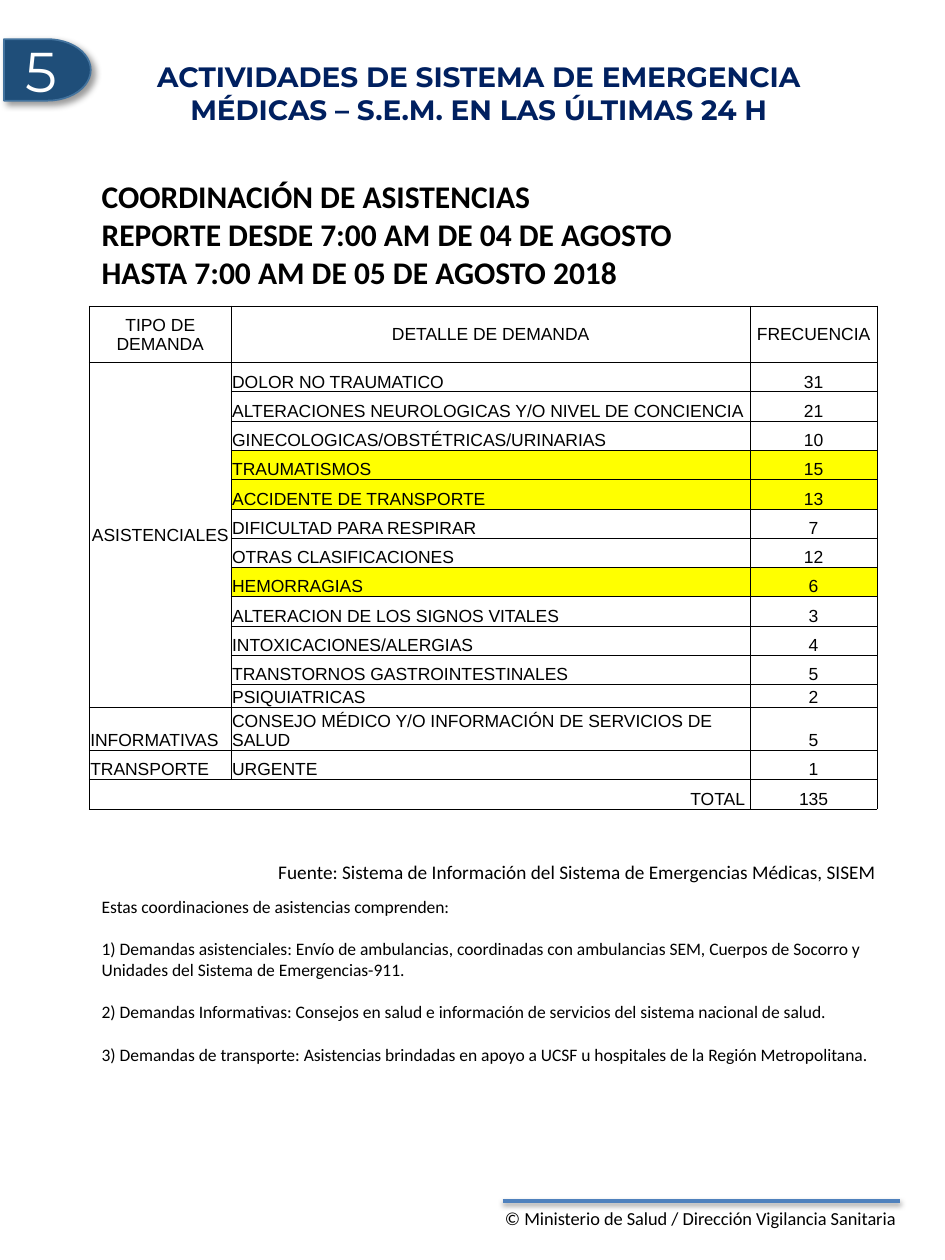
from dataclasses import dataclass
from typing import NamedTuple

from lxml import etree
from pptx import Presentation
from pptx import util as u
from pptx.dml.color import RGBColor
from pptx.enum import shapes, text
from pptx.oxml.ns import qn

Cm, Pt = u.Cm, u.Pt
ALIGN, ANCHOR = text.PP_ALIGN, text.MSO_ANCHOR


@dataclass(frozen=True)
class Theme:
    black: str = "000000"
    white: str = "FFFFFF"
    navy: str = "002060"
    badge: str = "1F4E79"
    badge_line: str = "43739E"
    rule: str = "4F81BD"
    mark: str = "FFFF00"
    body: str = "Calibri"
    display: str = "Montserrat"
    grid: str = "Arial"
    badge_size: float = 32
    heading_size: float = 18
    title_size: float = 16
    source_size: float = 11
    footer_size: float = 10.5
    small_size: float = 10
    border: float = 0.5


T = Theme()


class Style(NamedTuple):
    font: str
    size: float
    color: str = T.black
    bold: bool = False
    align: ALIGN = ALIGN.LEFT
    gap: float = 0


class Box(NamedTuple):
    left: float
    top: float
    width: float
    height: float
    lines: list[str]
    style: Style
    frame: dict


class Demand(NamedTuple):
    detail: str
    count: int
    kind: str = ""
    marked: bool = False
    height: float = 0.59


class Shadow(NamedTuple):
    alpha: int
    blur: float
    dist: float
    angle: int


def set_all(obj, values: dict) -> None:
    for name, value in values.items():
        setattr(obj, name, value)


def write(tf, lines: list[str], style: Style) -> None:
    for i, line in enumerate(lines):
        p = tf.paragraphs[0] if i == 0 else tf.add_paragraph()
        p.alignment = style.align
        p.space_before = Pt(style.gap if i else 0)
        r = p.add_run()
        r.text = line
        set_all(r.font, {"name": style.font, "size": Pt(style.size), "bold": style.bold})
        r.font.color.rgb = RGBColor.from_string(style.color)


def add_shadow(sp, shadow: Shadow) -> None:
    effects = etree.SubElement(sp._element.spPr, qn("a:effectLst"))
    outer = etree.SubElement(effects, qn("a:outerShdw"), blurRad=str(Pt(shadow.blur)),
                             dist=str(Pt(shadow.dist)), dir=str(shadow.angle * 60000),
                             algn="ctr", rotWithShape="0")
    color = etree.SubElement(outer, qn("a:srgbClr"), val=T.black)
    etree.SubElement(color, qn("a:alpha"), val=str(shadow.alpha * 1000))


def add_box(s, box: Box) -> None:
    sp = s.shapes.add_textbox(*map(Cm, box[:4]))
    set_all(sp.text_frame, box.frame)
    write(sp.text_frame, box.lines, box.style)


def add_rule(s) -> None:
    line = s.shapes.add_connector(shapes.MSO_CONNECTOR.STRAIGHT,
                                  Cm(10.13), Cm(24.21), Cm(18.14), Cm(24.21))
    line.line.color.rgb = RGBColor.from_string(T.rule)
    line.line.width = Pt(2)
    add_shadow(line, Shadow(38, 3.1, 1.6, 90))


def add_badge(s) -> None:
    sp = s.shapes.add_shape(shapes.MSO_SHAPE.FLOWCHART_DELAY,
                            Cm(0.08), Cm(0.79), Cm(1.75), Cm(1.24))
    sp.fill.solid()
    sp.fill.fore_color.rgb = RGBColor.from_string(T.badge)
    sp.line.color.rgb = RGBColor.from_string(T.badge_line)
    sp.line.width = Pt(1)
    add_shadow(sp, Shadow(40, 4, 3, 45))
    sp.text_frame.vertical_anchor = ANCHOR.MIDDLE
    write(sp.text_frame, ["5"], Style(T.display, T.badge_size, T.white, align=ALIGN.CENTER))


def fill_cell(cell, value: str, align: ALIGN, anchor: ANCHOR, marked: bool = False) -> None:
    set_all(cell, {"margin_left": Cm(0.02), "margin_right": Cm(0.02), "margin_top": Cm(0.02),
                   "margin_bottom": 0, "vertical_anchor": anchor})
    tcPr = cell._tc.get_or_add_tcPr()
    for side in ("lnL", "lnR", "lnT", "lnB"):
        ln = etree.SubElement(tcPr, qn(f"a:{side}"), w=str(Pt(T.border)))
        solid = etree.SubElement(ln, qn("a:solidFill"))
        etree.SubElement(solid, qn("a:srgbClr"), val=T.black)
    if marked:
        cell.fill.solid()
        cell.fill.fore_color.rgb = RGBColor.from_string(T.mark)
    else:
        cell.fill.background()
    if value:
        write(cell.text_frame, [value], Style(T.grid, T.small_size, align=align))


HEADER = ["TIPO DE DEMANDA", "DETALLE DE DEMANDA", "FRECUENCIA"]
COLUMNS = [2.86, 10.46, 2.56]
DEMANDS = [
    Demand("DOLOR NO TRAUMATICO", 31, "ASISTENCIALES"),
    Demand("ALTERACIONES NEUROLOGICAS Y/O NIVEL DE CONCIENCIA", 21),
    Demand("GINECOLOGICAS/OBSTÉTRICAS/URINARIAS", 10),
    Demand("TRAUMATISMOS", 15, marked=True),
    Demand("ACCIDENTE DE TRANSPORTE", 13, marked=True),
    Demand("DIFICULTAD PARA RESPIRAR", 7),
    Demand("OTRAS CLASIFICACIONES", 12),
    Demand("HEMORRAGIAS", 6, marked=True),
    Demand("ALTERACION DE LOS SIGNOS VITALES", 3),
    Demand("INTOXICACIONES/ALERGIAS", 4),
    Demand("TRANSTORNOS GASTROINTESTINALES", 5),
    Demand("PSIQUIATRICAS", 2, height=0.46),
    Demand("CONSEJO MÉDICO Y/O INFORMACIÓN DE SERVICIOS DE SALUD", 5, "INFORMATIVAS", height=0.87),
    Demand("URGENTE", 1, "TRANSPORTE"),
]


def add_demand_table(s) -> None:
    heights = [1.14, *(d.height for d in DEMANDS), 0.59]
    frame = s.shapes.add_table(len(heights), len(COLUMNS), Cm(1.8), Cm(6.17),
                               Cm(sum(COLUMNS)), Cm(sum(heights)))
    table = frame.table
    set_all(table, {"first_row": False, "horz_banding": False})
    for column, width in zip(table.columns, COLUMNS):
        column.width = Cm(width)
    for row, height in zip(table.rows, heights):
        row.height = Cm(height)

    # Header, demand rows, total
    for c, name in enumerate(HEADER):
        fill_cell(table.cell(0, c), name, ALIGN.CENTER, ANCHOR.MIDDLE)
    for i, d in enumerate(DEMANDS, 1):
        first = i == 1
        fill_cell(table.cell(i, 0), d.kind, ALIGN.CENTER if first else ALIGN.LEFT,
                  ANCHOR.MIDDLE if first else ANCHOR.BOTTOM)
        fill_cell(table.cell(i, 1), d.detail, ALIGN.LEFT, ANCHOR.BOTTOM, d.marked)
        fill_cell(table.cell(i, 2), str(d.count), ALIGN.CENTER, ANCHOR.BOTTOM, d.marked)
    last = len(heights) - 1
    total = str(sum(d.count for d in DEMANDS))
    for c, value in enumerate(["TOTAL ", "", total]):
        fill_cell(table.cell(last, c), value, ALIGN.CENTER if c == 2 else ALIGN.RIGHT, ANCHOR.BOTTOM)
    table.cell(1, 0).merge(table.cell(12, 0))
    table.cell(last, 0).merge(table.cell(last, 1))


GROW = {"word_wrap": False, "auto_size": text.MSO_AUTO_SIZE.SHAPE_TO_FIT_TEXT}
FOOTER = Box(9.93, 24.21, 8.53, 1.14, ["© Ministerio de Salud / Dirección Vigilancia Sanitaria"],
             Style(T.body, T.footer_size), GROW)
TITLE = Box(1.96, 1.22, 15.39, 1.3,
            ["ACTIVIDADES DE SISTEMA DE EMERGENCIA MÉDICAS – S.E.M. EN LAS ÚLTIMAS 24 H"],
            Style(T.display, T.title_size, T.navy, True, ALIGN.CENTER),
            {"word_wrap": True, "vertical_anchor": ANCHOR.MIDDLE})
NOTES = [
    Box(5.36, 17.22, 12.65, 0.74,
        ["Fuente: Sistema de Información del Sistema de Emergencias Médicas, SISEM"],
        Style(T.body, T.source_size), GROW),
    Box(1.8, 3.45, 12.6, 3.33,
        ["COORDINACIÓN DE ASISTENCIAS", "REPORTE DESDE 7:00 AM DE 04 DE AGOSTO",
         "HASTA 7:00 AM DE 05 DE AGOSTO 2018"],
        Style(T.body, T.heading_size, bold=True), GROW),
    Box(1.8, 17.93, 16.36, 3.68,
        ["Estas coordinaciones de asistencias comprenden:",
         "1) Demandas asistenciales: Envío de ambulancias, coordinadas con ambulancias SEM, "
         "Cuerpos de Socorro y Unidades del Sistema de Emergencias-911.",
         "2) Demandas Informativas: Consejos en salud e información de servicios del sistema "
         "nacional de salud.",
         "3) Demandas de transporte: Asistencias brindadas en apoyo a UCSF u hospitales de la "
         "Región Metropolitana."],
        Style(T.body, T.small_size, gap=12.2), {**GROW, "word_wrap": True}),
]


def main() -> None:
    prs = Presentation()
    set_all(prs, {"slide_width": Cm(19.05), "slide_height": Cm(25.4)})
    s = prs.slides.add_slide(prs.slide_layouts[6])
    # Footer
    add_rule(s)
    add_box(s, FOOTER)
    # Section number and title
    add_badge(s)
    add_box(s, TITLE)
    # Report
    add_demand_table(s)
    for box in NOTES:
        add_box(s, box)
    prs.save("out.pptx")


if __name__ == "__main__":
    main()
